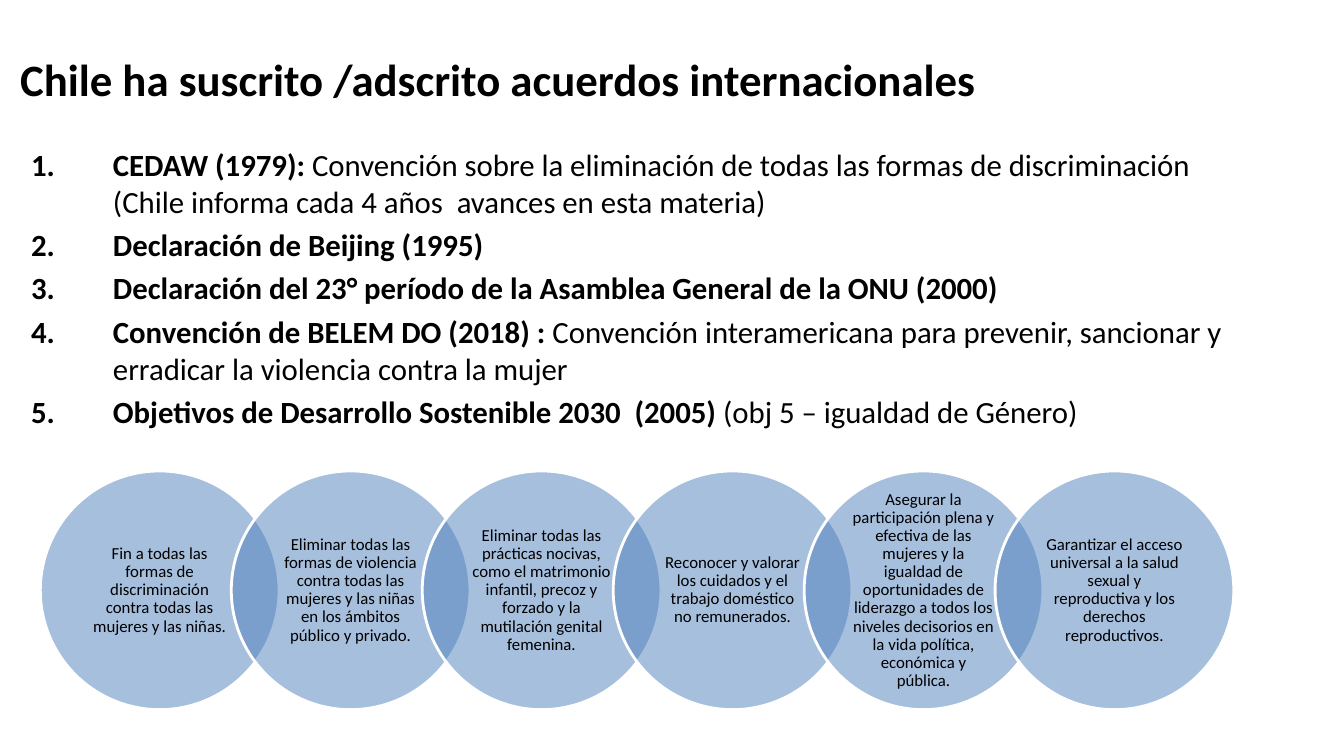
from dataclasses import dataclass

from lxml import etree
from pptx import Presentation
from pptx.dml.color import RGBColor
from pptx.enum.shapes import MSO_SHAPE
from pptx.enum.text import MSO_ANCHOR, PP_ALIGN
from pptx.oxml.ns import qn
from pptx.slide import Slide
from pptx.text.text import _Paragraph
from pptx.util import Pt

ELLIPSE = MSO_SHAPE.OVAL
MIDDLE, TOP = MSO_ANCHOR.MIDDLE, MSO_ANCHOR.TOP
CENTER, LEFT = PP_ALIGN.CENTER, PP_ALIGN.LEFT

COLORS = {"text": "000000", "circle": "4F81BD", "outline": "FFFFFF"}
FONT = "Calibri"
TITLE_SIZE, AGREEMENT_SIZE, GOAL_SIZE = 32, 22, 12

NUMBER_INDENT = 58.5
CIRCLE_LEFT, CIRCLE_TOP = 28.8, 336.4
CIRCLE_DIAMETER, CIRCLE_PITCH = 170.5, 136.4
CIRCLE_ALPHA = 50


@dataclass(frozen=True)
class Agreement:
    name: str
    detail: str = ""


AGREEMENTS = [
    Agreement(
        "CEDAW (1979): ",
        "Convención sobre la eliminación de todas las formas de discriminación "
        "(Chile informa cada 4 años  avances en esta materia)",
    ),
    Agreement("Declaración de Beijing (1995)"),
    Agreement("Declaración del 23° período de la Asamblea General de la ONU (2000)"),
    Agreement(
        "Convención de BELEM DO (2018) : ",
        "Convención interamericana para prevenir, sancionar y erradicar "
        "la violencia contra la mujer",
    ),
    Agreement(
        "Objetivos de Desarrollo Sostenible 2030  (2005) ",
        "(obj 5 – igualdad de Género)",
    ),
]

GOALS = [
    "Fin a todas las formas de discriminación contra todas las mujeres y las niñas.",
    "Eliminar todas las formas de violencia contra todas las mujeres y las niñas "
    "en los ámbitos público y privado.",
    "Eliminar todas las prácticas nocivas, como el matrimonio infantil, precoz y "
    "forzado y la mutilación genital femenina.",
    "Reconocer y valorar los cuidados y el trabajo doméstico no remunerados.",
    "Asegurar la participación plena y efectiva de las mujeres y la igualdad de "
    "oportunidades de liderazgo a todos los niveles decisorios en la vida política, "
    "económica y pública.",
    "Garantizar el acceso universal a la salud sexual y reproductiva y los derechos "
    "reproductivos.",
]


def color(key: str) -> RGBColor:
    return RGBColor.from_string(COLORS[key])


def add_run(paragraph: _Paragraph, text: str, size: float, bold: bool = False) -> None:
    run = paragraph.add_run()
    run.text = text
    run.font.name = FONT
    run.font.size = Pt(size)
    run.font.bold = bold
    run.font.color.rgb = color("text")


def number_paragraph(paragraph: _Paragraph) -> None:
    """Give the paragraph an automatic number with a hanging indent."""
    properties = paragraph._p.get_or_add_pPr()
    properties.set("marL", str(Pt(NUMBER_INDENT)))
    properties.set("indent", str(-Pt(NUMBER_INDENT)))
    etree.SubElement(properties, qn("a:buFont"), typeface="+mj-lt")
    etree.SubElement(properties, qn("a:buAutoNum"), type="arabicPeriod")


def add_title(slide: Slide, text: str) -> None:
    title = slide.shapes.title
    title.left, title.top, title.width, title.height = Pt(7.2), Pt(10.8), Pt(1066.3), Pt(90)
    title.text_frame.vertical_anchor = MIDDLE
    heading = title.text_frame.paragraphs[0]
    heading.alignment = LEFT
    add_run(heading, text, TITLE_SIZE, bold=True)


def add_agreements(slide: Slide, agreements: list[Agreement]) -> None:
    agreement_list = slide.shapes.add_textbox(Pt(15.1), Pt(100.8), Pt(870.5), Pt(256.3))
    frame = agreement_list.text_frame
    frame.word_wrap = True
    frame.vertical_anchor = TOP
    for index, agreement in enumerate(agreements):
        paragraph = frame.add_paragraph() if index else frame.paragraphs[0]
        number_paragraph(paragraph)
        if index:
            paragraph.space_before = Pt(AGREEMENT_SIZE * 0.2)
        add_run(paragraph, agreement.name, AGREEMENT_SIZE, bold=True)
        if agreement.detail:
            add_run(paragraph, agreement.detail, AGREEMENT_SIZE)


def add_goal(slide: Slide, left: float, text: str) -> None:
    circle = slide.shapes.add_shape(
        ELLIPSE, Pt(left), Pt(CIRCLE_TOP), Pt(CIRCLE_DIAMETER), Pt(CIRCLE_DIAMETER)
    )
    circle.shadow.inherit = False
    circle.fill.solid()
    circle.fill.fore_color.rgb = color("circle")
    fill_color = circle._element.spPr.find(qn("a:solidFill")).find(qn("a:srgbClr"))
    etree.SubElement(fill_color, qn("a:alpha"), val=str(CIRCLE_ALPHA * 1000))
    circle.line.color.rgb = color("outline")
    circle.line.width = Pt(2)

    frame = circle.text_frame
    frame.word_wrap = True
    frame.vertical_anchor = MIDDLE
    frame.margin_left = frame.margin_right = Pt(9.4)
    frame.margin_top = frame.margin_bottom = Pt(1.2)
    paragraph = frame.paragraphs[0]
    paragraph.alignment = CENTER
    paragraph.line_spacing = 0.9
    add_run(paragraph, text, GOAL_SIZE)


def main() -> None:
    presentation = Presentation()
    presentation.slide_width, presentation.slide_height = Pt(960), Pt(540)
    slide = presentation.slides.add_slide(presentation.slide_layouts.get_by_name("Title Only"))
    add_title(slide, "Chile ha suscrito /adscrito acuerdos internacionales")
    add_agreements(slide, AGREEMENTS)
    for index, goal in enumerate(GOALS):
        add_goal(slide, CIRCLE_LEFT + index * CIRCLE_PITCH, goal)
    presentation.save("out.pptx")


if __name__ == "__main__":
    main()
